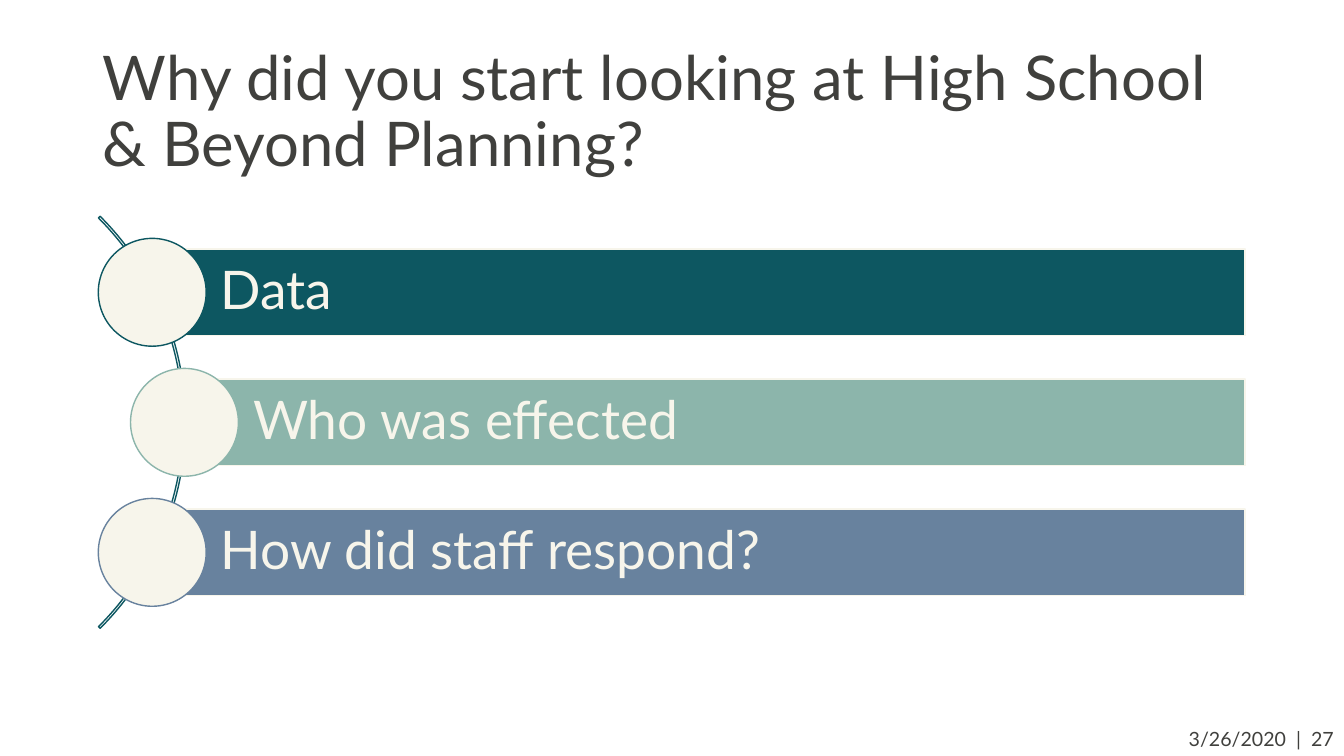
from dataclasses import dataclass

from pptx import Presentation
from pptx.dml.color import RGBColor
from pptx.enum.shapes import MSO_SHAPE
from pptx.enum.text import MSO_ANCHOR, PP_ALIGN
from pptx.util import Inches, Pt


@dataclass(frozen=True)
class Theme:
    font: str = "Lato"
    ink: str = "40403D"
    cream: str = "F7F5EB"
    teal: str = "0D5761"
    sage: str = "8CB5AB"
    slate: str = "68829E"
    title_size: int = 44
    topic_size: int = 38
    footer_size: int = 14


THEME = Theme()
TOPICS = [
    ("Data", THEME.teal, 0.59),
    ("Who was effected", THEME.sage, 0.91),
    ("How did staff respond?", THEME.slate, 0.59),
]


def place(shape, left, top, width, height):
    shape.left, shape.top = Inches(left), Inches(top)
    shape.width, shape.height = Inches(width), Inches(height)


def write(frame, text, size, color, align=PP_ALIGN.LEFT, line_spacing=1.0):
    frame.word_wrap = True
    paragraph = frame.paragraphs[0]
    paragraph.alignment = align
    paragraph.line_spacing = line_spacing
    run = paragraph.add_run()
    run.text = text
    run.font.name = THEME.font
    run.font.size = Pt(size)
    run.font.color.rgb = RGBColor.from_string(color)


def add_figure(slide, preset, left, top, width, height, fill, line):
    figure = slide.shapes.add_shape(
        preset, Inches(left), Inches(top), Inches(width), Inches(height)
    )
    figure.shadow.inherit = False
    if fill:
        figure.fill.solid()
        figure.fill.fore_color.rgb = RGBColor.from_string(fill)
    else:
        figure.fill.background()
    figure.line.color.rgb = RGBColor.from_string(line)
    figure.line.width = Pt(1)
    return figure


def add_heading(slide, left, top, width, height):
    heading = slide.shapes.title
    place(heading, left, top, width, height)
    heading.text_frame.vertical_anchor = MSO_ANCHOR.MIDDLE
    write(
        heading.text_frame,
        "Why did you start looking at High School & Beyond Planning?",
        THEME.title_size,
        THEME.ink,
        line_spacing=0.9,
    )


def add_topics(slide, left, top, width, height):
    middle = top + height / 2
    pitch, bar_height, dot, ring = 1.29, 0.86, 1.07, 5.78

    arc = add_figure(
        slide, MSO_SHAPE.BLOCK_ARC, left + 0.92 - ring, middle - ring / 2,
        ring, ring, None, THEME.teal,
    )
    for index, value in enumerate((189, 27, 0.004)):
        arc.adjustments[index] = value

    for index, (topic, color, indent) in enumerate(TOPICS):
        center = middle + (index - 1) * pitch
        bar = add_figure(
            slide, MSO_SHAPE.RECTANGLE, left + indent, center - bar_height / 2,
            width - indent, bar_height, color, THEME.cream,
        )
        frame = bar.text_frame
        frame.margin_left = Inches(0.68)
        frame.margin_top = frame.margin_right = frame.margin_bottom = Inches(0.11)
        frame.vertical_anchor = MSO_ANCHOR.MIDDLE
        write(frame, topic, THEME.topic_size, THEME.cream, line_spacing=0.9)
        add_figure(
            slide, MSO_SHAPE.OVAL, left + indent - dot / 2, center - dot / 2,
            dot, dot, THEME.cream, color,
        )


def add_footer(slide, left, top, width, height):
    footer = slide.shapes.add_textbox(0, 0, 0, 0)
    place(footer, left, top, width, height)
    write(
        footer.text_frame, "3/26/2020  |  27", THEME.footer_size, THEME.ink,
        align=PP_ALIGN.RIGHT,
    )


def main():
    deck = Presentation()
    deck.slide_width, deck.slide_height = Inches(13.33), Inches(7.5)
    slide = deck.slides.add_slide(deck.slide_layouts[5])
    add_heading(slide, 0.92, 0.4, 11.5, 1.45)
    add_topics(slide, 0.92, 2, 11.43, 4.38)
    add_footer(slide, 11.62, 7.16, 1.71, 0.34)
    deck.save("out.pptx")


if __name__ == "__main__":
    main()
